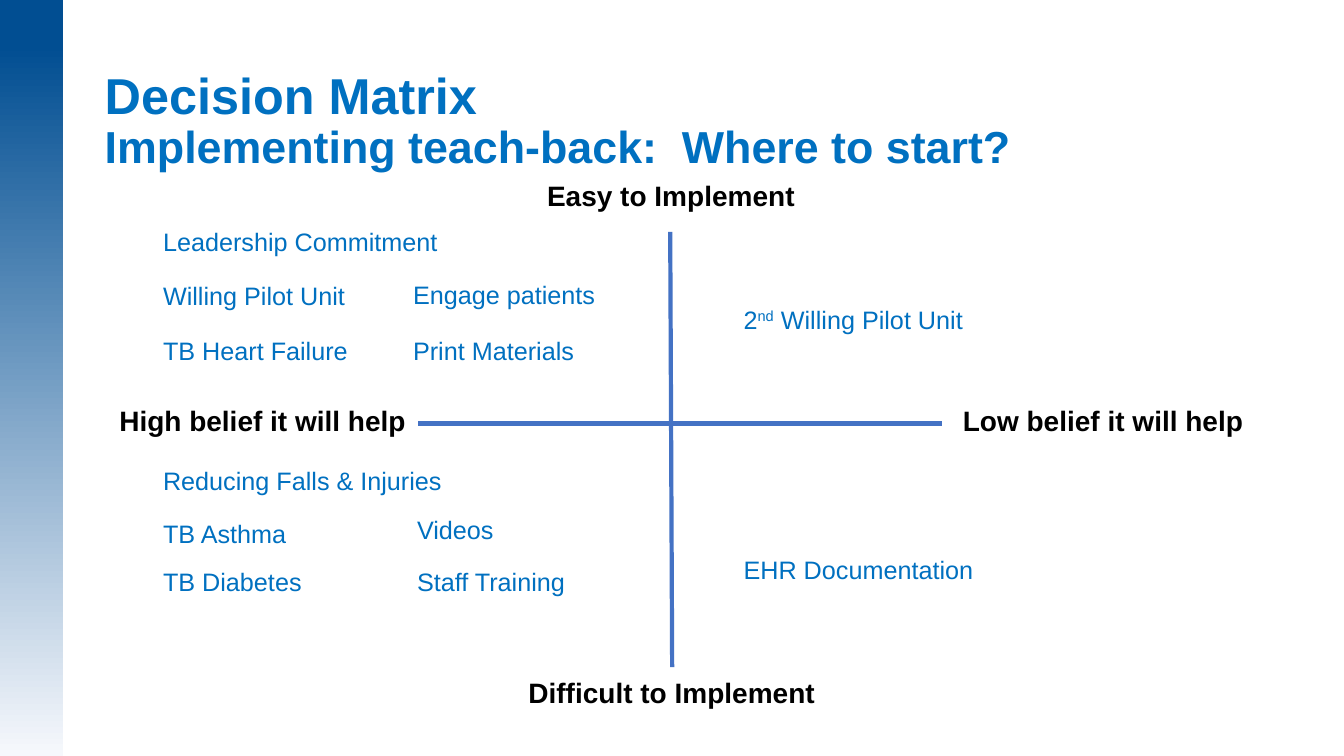
from pptx import Presentation
from pptx.dml.color import RGBColor
from pptx.enum.shapes import MSO_CONNECTOR as CONN, MSO_SHAPE as SHAPE
from pptx.enum.text import MSO_ANCHOR as ANCHOR, MSO_AUTO_SIZE as AUTO, PP_ALIGN as ALIGN
from pptx.oxml.ns import qn
from pptx.util import Cm, Pt

NAVY = RGBColor(0x01, 0x4E, 0x92)
PALE = RGBColor(0xF6, 0xF8, 0xFC)
BLUE = RGBColor(0x00, 0x70, 0xC0)
AXIS = RGBColor(0x44, 0x72, 0xC4)
BLACK = RGBColor(0, 0, 0)

# Matrix entries: left, top, width in cm from the matrix corner
ENTRIES = [
    ("Leadership Commitment", 1.7, 1.22, 8.41),
    ("Willing Pilot Unit", 1.7, 2.56, 6.05),
    ("TB Heart Failure", 1.7, 3.96, 5.56),
    ("Engage patients", 8, 2.54, 6.05),
    ("Print Materials", 8, 3.96, 5.56),
    ("Reducing Falls & Injuries", 1.7, 7.24, 9.09),
    ("TB Asthma", 1.7, 8.56, 5.87),
    ("TB Diabetes", 1.7, 9.78, 5.87),
    ("Videos", 8.1, 8.46, 5.66),
    ("Staff Training", 8.1, 9.78, 5.87),
    (("2", "nd", " Willing Pilot Unit"), 16.33, 3.17, 7.16),
    ("EHR Documentation", 16.33, 9.47, 7.19),
]
AXIS_LABELS = [
    ("Easy to Implement", 9.96, 0, 9.58),
    ("Difficult to Implement", 8.1, 12.52, 13.34),
    ("High belief it will help", 0, 5.66, 8.92),
    ("Low belief it will help", 21.41, 5.66, 8.46),
]
# Axes: start x, start y, end x, end y
AXES = [(14.73, 1.47, 14.78, 12.44), (8.38, 6.3, 21.59, 6.3)]


def style(font, size, color, bold=False):
    font.name, font.size, font.bold = "Arial", Pt(size), bold
    font.color.rgb = color


def add_sidebar(s, x, y, w, h):
    bar = s.shapes.add_shape(SHAPE.RECTANGLE, Cm(x), Cm(y), Cm(w), Cm(h))
    bar.shadow.inherit = False
    bar.line.fill.background()
    bar.fill.gradient()
    bar.fill.gradient_angle = 270
    for stop, pos, color in zip(bar.fill.gradient_stops, (0.06, 1), (NAVY, PALE)):
        stop.position = pos
        stop.color.rgb = color


def add_title(s, x, y, w, h):
    tf = s.shapes.add_textbox(Cm(x), Cm(y), Cm(w), Cm(h)).text_frame
    tf.word_wrap = True
    tf.vertical_anchor = ANCHOR.TOP
    tf.margin_top = 0
    p = tf.paragraphs[0]
    p.line_spacing = 0.9
    r = p.add_run()
    r.text = "Decision Matrix"
    style(r.font, 36, BLUE, True)
    p.add_line_break()
    r = p.add_run()
    r.text = "Implementing teach-back:  Where to start?"
    style(r.font, 32, BLUE, True)


def add_label(s, text, x, y, w, size, color, bold=False, align=ALIGN.LEFT):
    """Text is a string, or a (base, superscript, rest) triple."""
    tf = s.shapes.add_textbox(Cm(x), Cm(y), Cm(w), Pt(size * 1.2 + 7.2)).text_frame
    tf.word_wrap = True
    tf.auto_size = AUTO.SHAPE_TO_FIT_TEXT
    p = tf.paragraphs[0]
    p.alignment = align
    style(p.font, size, color, bold)
    for i, part in enumerate([text] if isinstance(text, str) else text):
        r = p.add_run()
        r.text = part
        if i == 1:
            r._r.get_or_add_rPr().set("baseline", "30000")


def add_matrix(s, x, y):
    # Entries in the four quadrants
    for text, dx, dy, w in ENTRIES:
        add_label(s, text, x + dx, y + dy, w, 18, BLUE)
    # Labels at the axis ends
    for text, dx, dy, w in AXIS_LABELS:
        add_label(s, text, x + dx, y + dy, w, 20, BLACK, True, ALIGN.CENTER)
    # Crossing axes
    for x1, y1, x2, y2 in AXES:
        axis = s.shapes.add_connector(CONN.STRAIGHT, Cm(x + x1), Cm(y + y1),
                                      Cm(x + x2), Cm(y + y2))
        axis.line.color.rgb = AXIS
        axis.line.width = Pt(3)
        sp_pr = axis._element.spPr
        sp_pr.append(sp_pr.makeelement(qn("a:effectLst"), {}))


def main():
    prs = Presentation()
    prs.slide_width, prs.slide_height = Cm(33.87), Cm(19.05)
    s = prs.slides.add_slide(prs.slide_layouts[6])
    add_sidebar(s, 0, 0, 1.6, 19.05)
    add_title(s, 2.39, 1.78, 30.71, 3.23)
    add_matrix(s, 2.16, 4.37)
    prs.save("out.pptx")


if __name__ == "__main__":
    main()
